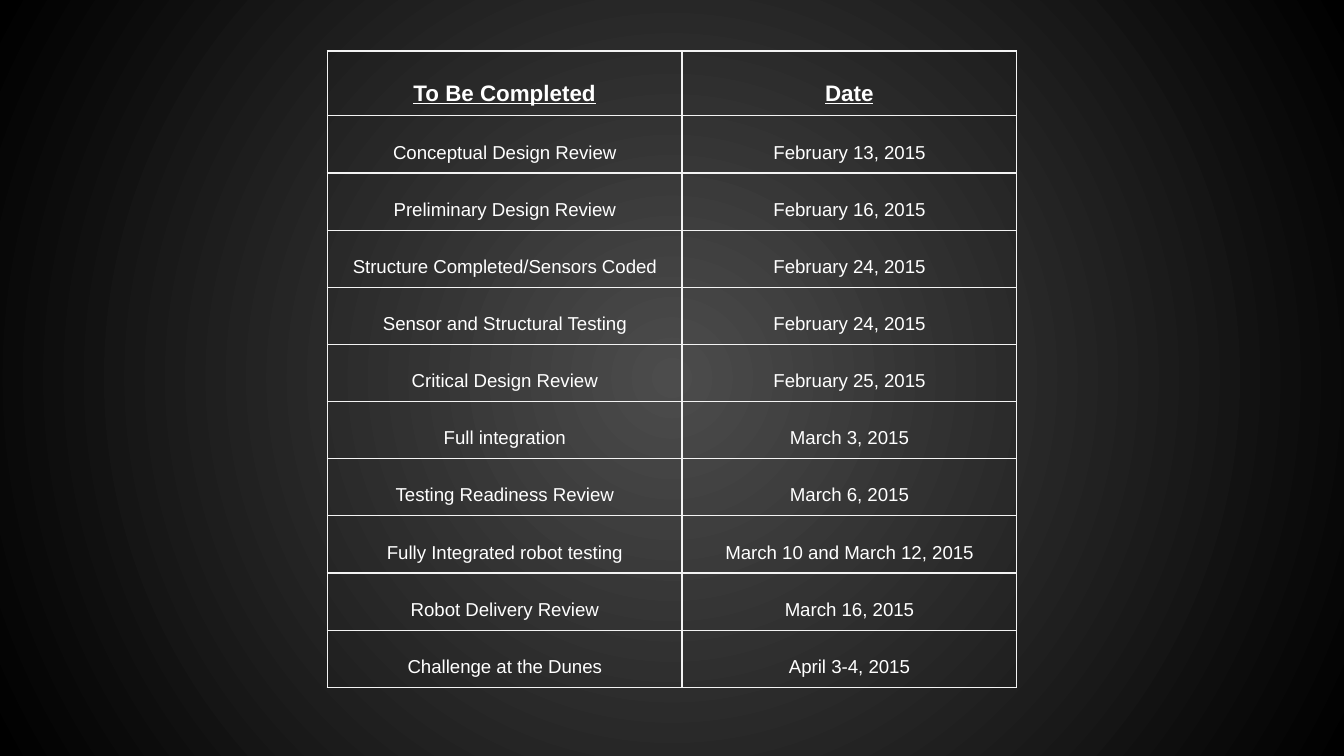
"""Builds a one-page project schedule table on a radial dark background."""
from lxml.etree import SubElement
from pptx import Presentation
from pptx.dml.color import RGBColor
from pptx.enum.text import PP_ALIGN
from pptx.oxml.ns import qn
from pptx.util import Inches, Pt

WHITE = RGBColor(0xFF, 0xFF, 0xFF)
BORDER = RGBColor(0xF3, 0xF3, 0xF3)
CHARCOAL = RGBColor(0x4C, 0x4C, 0x4C)
BLACK = RGBColor(0x00, 0x00, 0x00)

PAGE_WIDTH = 10
PAGE_HEIGHT = PAGE_WIDTH * 9 / 16

SCHEDULE = [
    ("To Be Completed", "Date"),
    ("Conceptual Design Review", "February 13, 2015"),
    ("Preliminary Design Review", "February 16, 2015"),
    ("Structure Completed/Sensors Coded", "February 24, 2015"),
    ("Sensor and Structural Testing", "February 24, 2015"),
    ("Critical Design Review", "February 25, 2015"),
    ("Full integration", "March 3, 2015"),
    ("Testing Readiness Review", "March 6, 2015"),
    ("Fully Integrated robot testing", "March 10 and March 12, 2015"),
    ("Robot Delivery Review", "March 16, 2015"),
    ("Challenge at the Dunes", "April 3-4, 2015"),
]


def write_text(frame, text, size=10, bold=False, underline=False, color=WHITE, font="Arial"):
    para = frame.paragraphs[0]
    para.alignment = PP_ALIGN.CENTER
    para.line_spacing = 1.8
    span = para.add_run()
    span.text = text
    span.font.name = font
    span.font.size = Pt(size)
    span.font.bold = bold
    span.font.underline = underline
    span.font.color.rgb = color


class SlideBuilder:
    def __init__(self, page, inset=7 / 96, border_width=0.75):
        self.page = page
        self.inset = Inches(inset)
        self.border_width = Pt(border_width)

    def radial_background(self, inner, outer):
        fill = self.page.background.fill
        fill.gradient()
        for stop, color in zip(fill.gradient_stops, (inner, outer)):
            stop.color.rgb = color
        gradient = next(self.page.element.iter(qn("a:gradFill")))
        gradient.remove(gradient.find(qn("a:lin")))
        circle = SubElement(gradient, qn("a:path"), path="circle")
        SubElement(circle, qn("a:fillToRect"), l="50000", t="50000", r="50000", b="50000")

    def border(self, cell, color):
        properties = cell._tc.get_or_add_tcPr()
        for position, side in enumerate(("lnL", "lnR", "lnT", "lnB")):
            line = SubElement(properties, qn(f"a:{side}"), w=str(self.border_width))
            solid = SubElement(line, qn("a:solidFill"))
            SubElement(solid, qn("a:srgbClr"), val=str(color))
            properties.insert(position, line)

    def cell(self, cell, text, **text_format):
        cell.margin_left = cell.margin_right = self.inset
        cell.margin_top = cell.margin_bottom = self.inset
        cell.fill.background()
        self.border(cell, BORDER)
        write_text(cell.text_frame, text, **text_format)

    def centered_table(self, rows, top, height, widths, header_height, row_height):
        left = (PAGE_WIDTH - sum(widths)) / 2
        box = self.page.shapes.add_table(
            len(rows), len(widths), Inches(left), Inches(top),
            Inches(sum(widths)), Inches(height))
        table = box.table
        table.first_row = table.horz_banding = False
        for column, width in zip(table.columns, widths):
            column.width = Inches(width)
        for index, texts in enumerate(rows):
            is_header = index == 0
            table.rows[index].height = Inches(header_height if is_header else row_height)
            for column, text in enumerate(texts):
                self.cell(table.cell(index, column), text, size=12 if is_header else 10,
                          bold=is_header, underline=is_header)
        box.height = Inches(height)


def main():
    deck = Presentation()
    deck.slide_width = Inches(PAGE_WIDTH)
    deck.slide_height = Inches(PAGE_HEIGHT)
    builder = SlideBuilder(deck.slides.add_slide(deck.slide_layouts[6]))
    builder.radial_background(CHARCOAL, BLACK)
    builder.centered_table(SCHEDULE, top=0.38, height=4.96, widths=(2.64, 2.49),
                           header_height=0.44, row_height=0.39)
    deck.save("out.pptx")


if __name__ == "__main__":
    main()
